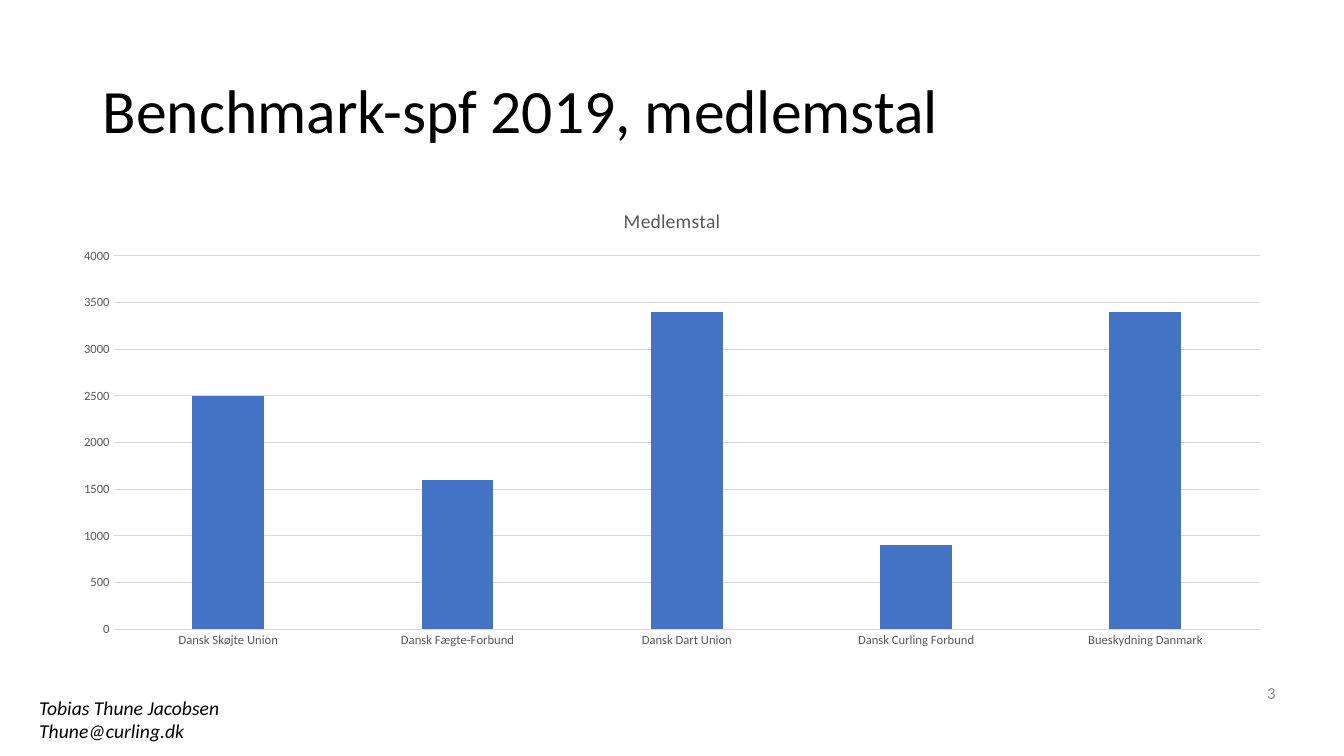
"""Build the membership benchmark slide with a column chart."""
from pptx import Presentation
from pptx.chart.data import CategoryChartData
from pptx.dml.color import RGBColor
from pptx.enum.chart import XL_CHART_TYPE, XL_TICK_MARK
from pptx.enum.text import MSO_ANCHOR, MSO_AUTO_SIZE, PP_ALIGN
from pptx.util import Inches, Pt


def color(value):
    """Turn a hex string into a colour."""
    return RGBColor.from_string(value)


class SlideBuilder:
    """Hold the style and the current slide."""

    font_name = "Calibri"
    text_color = "000000"
    number_color = "8C8C8C"
    chart_text_color = "595959"
    grid_color = "D9D9D9"
    bar_color = "4472C4"

    def __init__(self, slide):
        """Keep the slide to draw on."""
        self.slide = slide

    def style_font(self, font, size, font_color):
        """Set typeface, size and colour."""
        font.name = self.font_name
        font.size = Pt(size)
        font.bold = False
        font.color.rgb = color(font_color)

    def style_line(self, line):
        """Give a chart line the thin grid style."""
        line.color.rgb = color(self.grid_color)
        line.width = Pt(0.75)

    def add_text(self, box, lines, size, font_color=text_color, align=PP_ALIGN.LEFT,
                 anchor=MSO_ANCHOR.MIDDLE, italic=False, spacing=None, wrap=True):
        """Add a text box with one paragraph per line."""
        shape = self.slide.shapes.add_textbox(*map(Inches, box))
        frame = shape.text_frame
        frame.word_wrap = wrap
        frame.vertical_anchor = anchor
        frame.auto_size = MSO_AUTO_SIZE.NONE if wrap else MSO_AUTO_SIZE.SHAPE_TO_FIT_TEXT
        for index, line in enumerate(lines):
            paragraph = frame.add_paragraph() if index else frame.paragraphs[0]
            paragraph.alignment = align
            paragraph.line_spacing = spacing
            run = paragraph.add_run()
            run.text = line
            self.style_font(run.font, size, font_color)
            run.font.italic = italic

    def add_column_chart(self, box, title, values):
        """Add a titled column chart with a single series."""
        data = CategoryChartData()
        data.categories = list(values)
        data.add_series(title, list(values.values()))
        chart = self.slide.shapes.add_chart(
            XL_CHART_TYPE.COLUMN_CLUSTERED, *map(Inches, box), data).chart
        self.style_font(chart.font, 10, self.text_color)
        chart.has_legend = False
        chart.has_title = True
        run = chart.chart_title.text_frame.paragraphs[0].add_run()
        run.text = title
        self.style_font(run.font, 14, self.chart_text_color)
        chart.chart_title.include_in_layout = False

        plot = chart.plots[0]
        plot.gap_width = 219
        plot.overlap = -27
        plot.vary_by_categories = False
        fill = plot.series[0].format.fill
        fill.solid()
        fill.fore_color.rgb = color(self.bar_color)

        for axis in (chart.category_axis, chart.value_axis):
            axis.major_tick_mark = XL_TICK_MARK.NONE
            axis.minor_tick_mark = XL_TICK_MARK.NONE
            self.style_font(axis.tick_labels.font, 9, self.chart_text_color)
        self.style_line(chart.category_axis.format.line)
        value_axis = chart.value_axis
        value_axis.minimum_scale = 0
        value_axis.maximum_scale = 4000
        value_axis.major_unit = 500
        value_axis.format.line.fill.background()
        self.style_line(value_axis.major_gridlines.format.line)


def main():
    """Create the presentation and save it."""
    presentation = Presentation()
    presentation.slide_width = Inches(13.33)
    presentation.slide_height = Inches(7.5)
    builder = SlideBuilder(presentation.slides.add_slide(presentation.slide_layouts[6]))
    members = {
        "Dansk Skøjte Union": 2500,
        "Dansk Fægte-Forbund": 1600,
        "Dansk Dart Union": 3400,
        "Dansk Curling Forbund": 900,
        "Bueskydning Danmark": 3400,
    }
    builder.add_text((0.92, 0.4, 11.5, 1.45), ["Benchmark-spf 2019, medlemstal"], 44,
                     spacing=0.9)
    builder.add_text((12.09, 6.81, 0.66, 0.13), ["3"], 12, builder.number_color,
                     align=PP_ALIGN.RIGHT)
    builder.add_column_chart((0.59, 1.87, 12.15, 4.65), "Medlemstal", members)
    builder.add_text((0.29, 6.85, 2.01, 0.57),
                     ["Tobias Thune Jacobsen", "Thune@curling.dk"], 14,
                     anchor=MSO_ANCHOR.TOP, italic=True, wrap=False)
    presentation.save("out.pptx")


if __name__ == "__main__":
    main()
